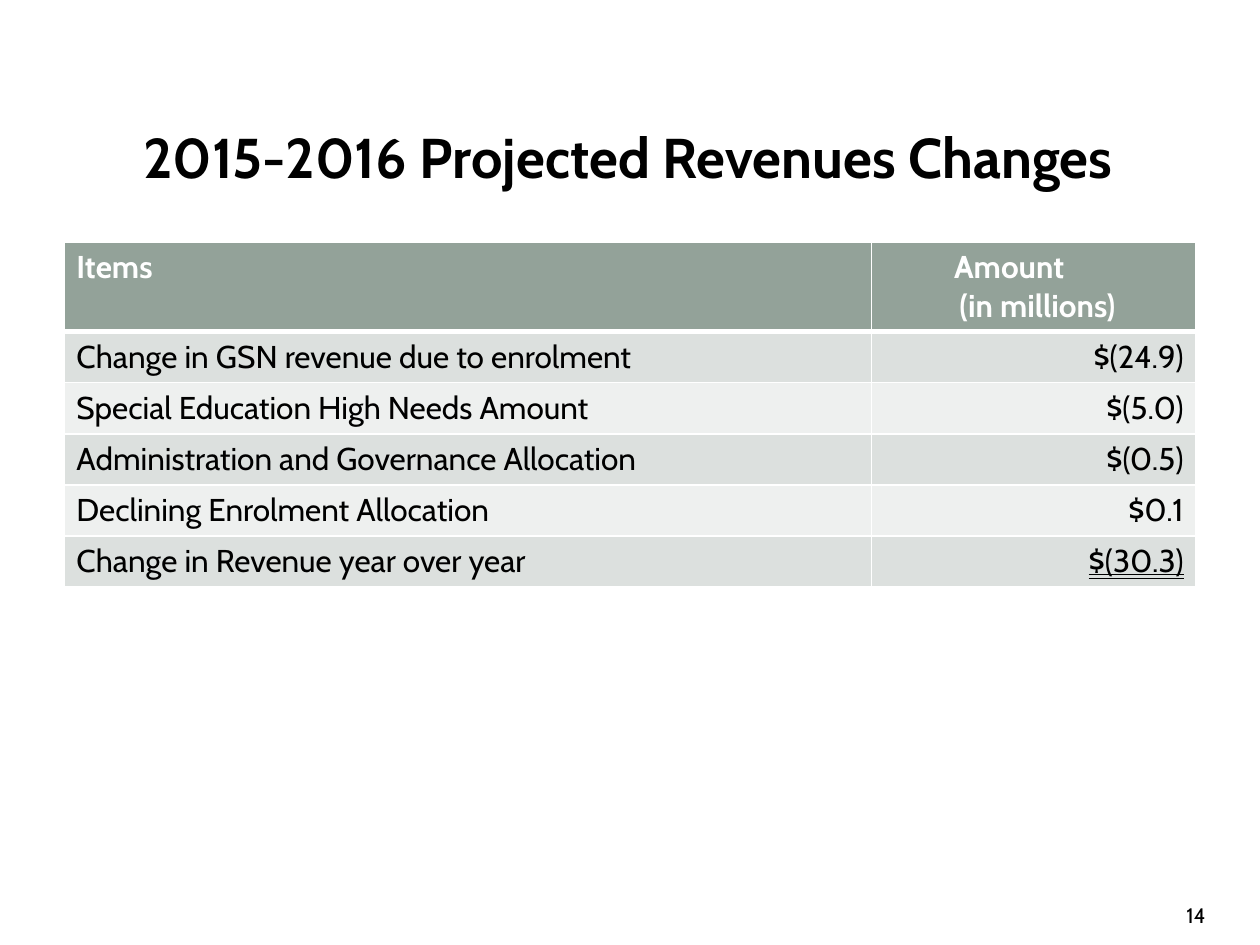
"""Build the slide of projected revenue changes for 2015-2016."""
from lxml.etree import SubElement
from pptx import Presentation
from pptx.dml.color import RGBColor
from pptx.enum.text import MSO_ANCHOR, MSO_AUTO_SIZE, MSO_UNDERLINE, PP_ALIGN
from pptx.oxml.ns import qn
from pptx.util import Pt

BLACK = RGBColor(0x00, 0x00, 0x00)
WHITE = RGBColor(0xFF, 0xFF, 0xFF)
SAGE = RGBColor(0x93, 0xA2, 0x99)
BANDS = [RGBColor(0xDC, 0xE0, 0xDE), RGBColor(0xEE, 0xF0, 0xEF)]


def write(paragraph, text, size=18, color=BLACK, bold=False, align=PP_ALIGN.LEFT,
          underline=None, indent=0):
    paragraph.alignment = align
    if indent:
        paragraph._p.get_or_add_pPr().set("marL", str(Pt(indent)))
    run = paragraph.add_run()
    run.text = text
    run.font.name = "Cabin"
    run.font.size = Pt(size)
    run.font.bold = bold
    run.font.underline = underline
    run.font.color.rgb = color


def style_cell(cell, fill, bottom=1):
    properties = cell._tc.get_or_add_tcPr()
    for side, width in (("L", 1), ("R", 1), ("T", 1), ("B", bottom)):
        line = SubElement(properties, qn(f"a:ln{side}"), w=str(Pt(width)))
        solid = SubElement(line, qn("a:solidFill"))
        SubElement(solid, qn("a:srgbClr"), val=str(WHITE))
    cell.fill.solid()
    cell.fill.fore_color.rgb = fill


presentation = Presentation()
presentation.slide_width, presentation.slide_height = Pt(720), Pt(540)
slide = presentation.slides.add_slide(presentation.slide_layouts[5])

heading = slide.shapes.title
heading.left, heading.top, heading.width, heading.height = Pt(34), Pt(48), Pt(650), Pt(82)
heading.text_frame.auto_size = MSO_AUTO_SIZE.NONE
heading.text_frame.vertical_anchor = MSO_ANCHOR.MIDDLE
write(heading.text_frame.paragraphs[0], "2015-2016 Projected Revenues Changes",
      size=32, bold=True, align=PP_ALIGN.CENTER)

changes = [
    ("Change in GSN revenue due to enrolment", "$(24.9)"),
    ("Special Education High Needs Amount", "$(5.0)"),
    ("Administration and Governance Allocation", "$(0.5)"),
    ("Declining Enrolment Allocation", "$0.1"),
    ("Change in Revenue year over year", "$(30.3)"),
]
revenue = slide.shapes.add_table(len(changes) + 1, 2, Pt(36.5), Pt(138.25),
                                 Pt(647), Pt(196.5)).table
revenue.columns[0].width, revenue.columns[1].width = Pt(461.5), Pt(185.5)
revenue.rows[0].height = Pt(50.25)

items_head, amount_head = revenue.cell(0, 0), revenue.cell(0, 1)
for head in (items_head, amount_head):
    style_cell(head, SAGE, bottom=3)
write(items_head.text_frame.paragraphs[0], "Items", color=WHITE, bold=True)
write(amount_head.text_frame.paragraphs[0], "Amount", color=WHITE, bold=True, indent=40)
write(amount_head.text_frame.add_paragraph(), "(in millions)", color=WHITE, bold=True, indent=43)

for row, (item, amount) in enumerate(changes, start=1):
    revenue.rows[row].height = Pt(29.25)
    item_cell, amount_cell = revenue.cell(row, 0), revenue.cell(row, 1)
    for cell in (item_cell, amount_cell):
        style_cell(cell, BANDS[(row - 1) % 2], bottom=1)
    write(item_cell.text_frame.paragraphs[0], item)
    total_line = MSO_UNDERLINE.DOUBLE_LINE if row == len(changes) else None
    write(amount_cell.text_frame.paragraphs[0], amount, align=PP_ALIGN.RIGHT, underline=total_line)

page_number = slide.shapes.add_textbox(Pt(612), Pt(504), Pt(84), Pt(26)).text_frame
page_number.word_wrap = True
page_number.margin_bottom = 0
page_number.vertical_anchor = MSO_ANCHOR.BOTTOM
write(page_number.paragraphs[0], "14", size=12, align=PP_ALIGN.RIGHT)

presentation.save("out.pptx")
